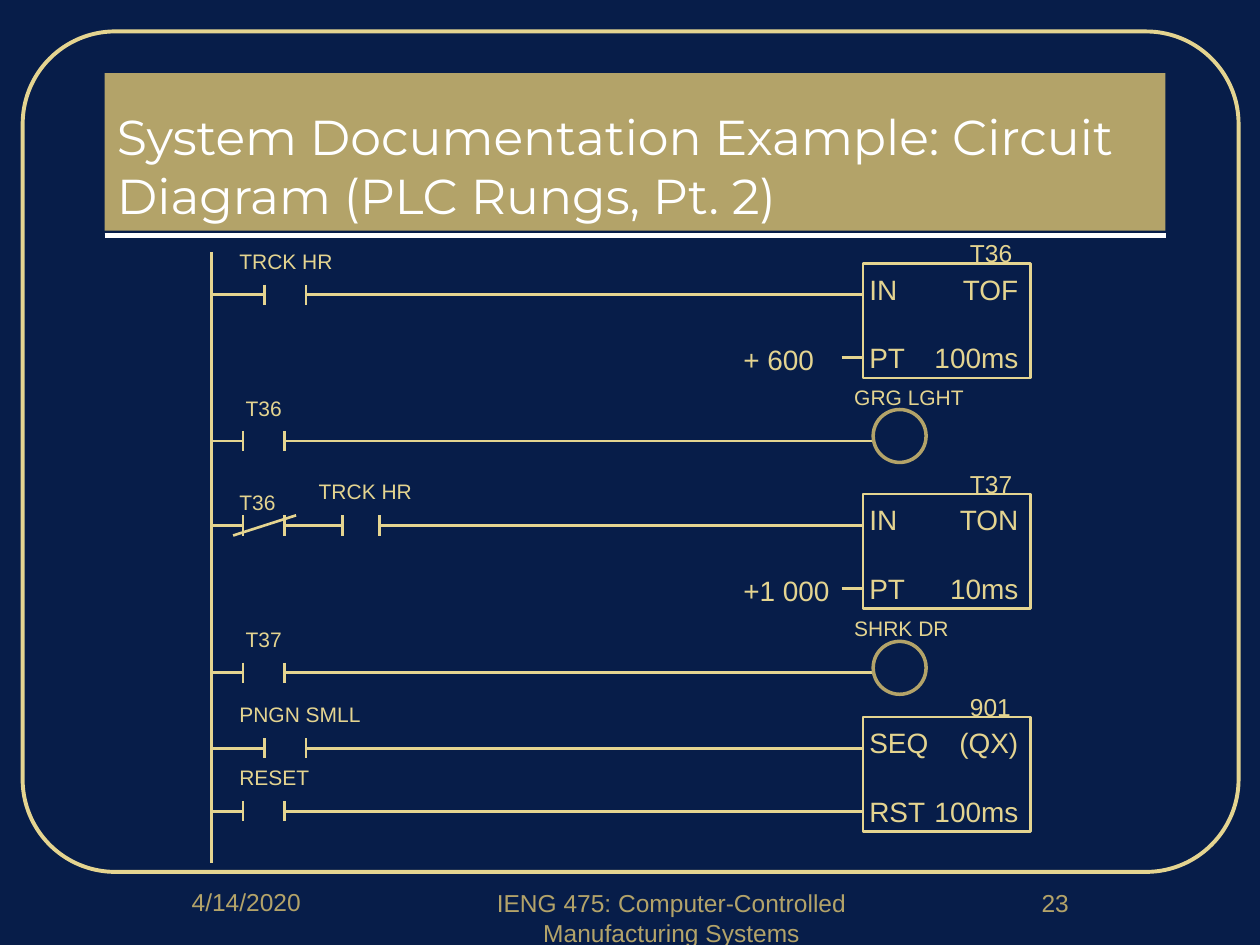
from pptx import Presentation
from pptx.dml.color import RGBColor
from pptx.enum import shapes, text
from pptx.oxml import ns
from pptx.util import Inches, Pt
from lxml import etree

THEME = dict(
    back="071D49", wire="E4D490", gold="B3A369", white="FFFFFF",
    head="Montserrat", body="Arial",
    title=28, block=16, name=14, tag=12,
)
TITLE = "System Documentation Example: Circuit Diagram (PLC Rungs, Pt. 2)"
# left, top, width, text
FOOT = [
    (0.83, 6.99, 2.25, "4/14/2020"),
    (3.58, 7.0, 3.5, "IENG 475: Computer-Controlled Manufacturing Systems"),
    (7.5, 7.0, 1.75, "23"),
]
RAIL, BOX, COIL = 1.68, 6.85, 6.93
# wire height, right end, contacts: (left, gap, tag, tag left, tag top)
RUNGS = [
    (2.34, BOX, [(2.1, 0.33, "TRCK HR", 1.9, 1.92)]),
    (3.5, COIL, [(1.93, 0.33, "T36", 1.95, 3.09)]),
    (4.17, BOX, [(1.93, 0.33, "T36", 1.9, 3.84),
                 (2.72, 0.29, "TRCK HR", 2.53, 3.75)]),
    (5.34, COIL, [(1.93, 0.33, "T37", 1.95, 4.92)]),
    (5.94, BOX, [(2.1, 0.33, "PNGN SMLL", 1.9, 5.52)]),
    (6.44, BOX, [(1.93, 0.33, "RESET", 1.9, 6.02)]),
]
# top, name, left pins, right words, preset
BLOCKS = [
    (2.09, "T36", ("IN", "PT"), ("TOF", "100ms"), "+ 600"),
    (3.92, "T37", ("IN", "PT"), ("TON", "10ms"), "+1 000"),
    (5.69, "901", ("SEQ", "RST"), ("(QX)", "100ms"), None),
]
# top, tag
COILS = [(3.25, "GRG LGHT"), (5.09, "SHRK DR")]

MARK = shapes.MSO_SHAPE
ALIGN = text.PP_ALIGN
prs = Presentation()
prs.slide_width, prs.slide_height = Inches(10), Inches(7.5)
slide = prs.slides.add_slide(prs.slide_layouts[6])
slide.background.fill.solid()
slide.background.fill.fore_color.rgb = RGBColor.from_string(THEME["back"])


def line(x1, y1, x2, y2, color="wire", width=1.5):
    wire = slide.shapes.add_connector(
        shapes.MSO_CONNECTOR.STRAIGHT, *map(Inches, (x1, y1, x2, y2)))
    wire.line.color.rgb = RGBColor.from_string(THEME[color])
    wire.line.width = Pt(width)
    etree.SubElement(wire._element.spPr, ns.qn("a:effectLst"))


def shape(kind, at, fill=None, edge=None, width=1.5):
    item = slide.shapes.add_shape(kind, *map(Inches, at))
    item.shadow.inherit = False
    if fill:
        item.fill.solid()
        item.fill.fore_color.rgb = RGBColor.from_string(THEME[fill])
    else:
        item.fill.background()
    if edge:
        item.line.color.rgb = RGBColor.from_string(THEME[edge])
        item.line.width = Pt(width)
    else:
        item.line.fill.background()
    return item


def write(item, words, size, color="wire", font="body", align=ALIGN.LEFT,
          side=0.1, top=0.05, gap=0, wrap=True):
    frame = item.text_frame
    frame.text = words
    frame.word_wrap = wrap
    frame.vertical_anchor = text.MSO_ANCHOR.TOP
    frame.margin_left = frame.margin_right = Inches(side)
    frame.margin_top = frame.margin_bottom = Inches(top)
    for i, para in enumerate(frame.paragraphs):
        para.alignment = align
        para.space_before = Pt(gap if i else 0)
        for run in para.runs:
            run.font.size = Pt(THEME[size])
            run.font.name = THEME[font]
            run.font.color.rgb = RGBColor.from_string(THEME[color])
    return frame


def label(at, words, size, **style):
    write(slide.shapes.add_textbox(*map(Inches, at)), words, size, **style)


def tag(x, y, words):
    label((x, y, 1.1, 0.3), words, "tag", side=0, wrap=False)


# Frame, title and footer
rim = shape(MARK.ROUNDED_RECTANGLE, (0.18, 0.25, 9.65, 6.67), edge="wire", width=2.25)
rim.adjustments[0] = 0.11
line(0.83, 1.87, 9.25, 1.87, "white", 3)
band = shape(MARK.RECTANGLE, (0.83, 0.58, 8.42, 1.25), fill="gold")
write(band, TITLE, "title", "white", "head").vertical_anchor = text.MSO_ANCHOR.BOTTOM
for x, y, w, words in FOOT:
    label((x, y, w, 0.5), words, "name", color="gold", align=ALIGN.CENTER)

# Power rail and rungs
line(RAIL, 2, RAIL, 6.85)
for y, end, pairs in RUNGS:
    start = RAIL
    for x, gap, words, tx, ty in pairs:
        line(start, y, x, y)
        start = x + gap
        for bar in (x, start):
            line(bar, y - 0.08, bar, y + 0.08)
        tag(tx, ty, words)
    line(start, y, end, y)
line(1.85, 4.25, 2.35, 4.09)  # normally closed contact

# Timer and sequencer blocks
for y, name, pins, words, preset in BLOCKS:
    body = shape(MARK.RECTANGLE, (BOX, y, 1.33, 0.91), edge="wire")
    write(body, "\n".join(pins), "block", side=0.05, top=0.07, gap=20)
    label((7.26, y, 0.92, 0.91), "\n".join(words), "block",
          align=ALIGN.RIGHT, top=0.07, gap=20, wrap=True)
    label((7.6, y - 0.25, 0.67, 0.34), name, "name")
    if preset:
        line(BOX - 0.17, y + 0.75, BOX, y + 0.75)
        label((5.9, y + 0.58, 0.75, 0.37), preset, "block", side=0, wrap=False)

# Output coils
for y, words in COILS:
    shape(MARK.OVAL, (COIL, y, 0.42, 0.42), edge="gold", width=2)
    tag(6.78, y - 0.25, words)

prs.save("out.pptx")
